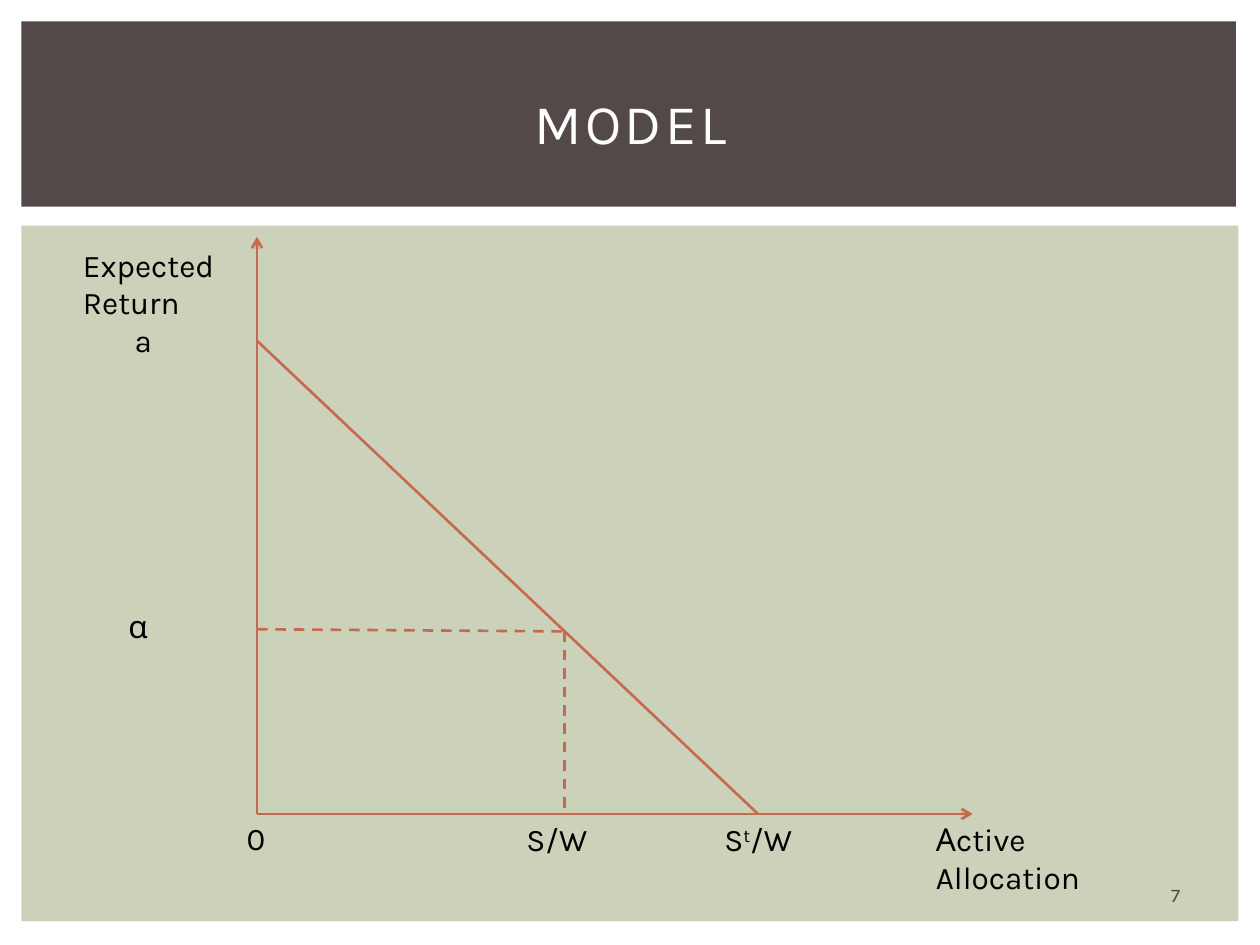
from collections import namedtuple

from lxml.etree import SubElement
from pptx import Presentation
from pptx.dml.color import RGBColor
from pptx.enum.dml import MSO_LINE
from pptx.enum.shapes import MSO_CONNECTOR, MSO_SHAPE
from pptx.enum.text import MSO_ANCHOR, PP_ALIGN
from pptx.oxml.ns import qn
from pptx.util import Inches, Pt

# The slide is a grid of 100 columns by 75 rows
UNIT = Inches(0.1)
Box = namedtuple("Box", "left top width height")
FONT = "Karla"
BLACK, WHITE, BROWN, SAGE, RUST = "000000", "FFFFFF", "534949", "CCD1B9", "C66951"


def color(hex_string):
    return RGBColor.from_string(hex_string)


def grid(*cells):
    return [round(cell * UNIT) for cell in cells]


def inside(box, left, top, width, height):
    return Box(box.left + left, box.top + top, width, height)


def add_panel(page, box, fill):
    panel = page.shapes.add_shape(MSO_SHAPE.RECTANGLE, *grid(*box))
    panel.shadow.inherit = False
    panel.fill.solid()
    panel.fill.fore_color.rgb = color(fill)
    panel.line.fill.background()


def add_text(page, box, text, size=18, ink=BLACK, align=PP_ALIGN.LEFT, anchor=MSO_ANCHOR.TOP):
    """Write text; the part between carets is superscript."""
    frame = page.shapes.add_textbox(*grid(*box)).text_frame
    frame.word_wrap = True
    frame.vertical_anchor = anchor
    para = frame.paragraphs[0]
    para.alignment = align
    para.font.name, para.font.size = FONT, Pt(size)
    para.font.color.rgb = color(ink)
    for index, part in enumerate(text.split("^")):
        span = para.add_run()
        span.text = part
        if index % 2:
            span._r.get_or_add_rPr().set("baseline", "30000")
    return para


def add_line(page, start, end, dashed=False, arrow=False):
    line = page.shapes.add_connector(MSO_CONNECTOR.STRAIGHT, *grid(*start, *end))
    line.line.color.rgb = color(RUST)
    line.line.width = Pt(1.5)
    if dashed:
        line.line.dash_style = MSO_LINE.DASH
    if arrow:
        SubElement(line.line._get_or_add_ln(), qn("a:tailEnd"), type="arrow")
    SubElement(line._element.spPr, qn("a:effectLst"))


def add_header(page, box, title):
    add_panel(page, box, BROWN)
    para = add_text(page, inside(box, 2.5, 2.2, 91.7, 11.5), title, 32, WHITE,
                    PP_ALIGN.CENTER, MSO_ANCHOR.MIDDLE)
    para.runs[0]._r.get_or_add_rPr().set("spc", "200")


def add_diagram(page, box):
    add_panel(page, box, SAGE)
    origin_x, origin_y = box.left + 18.7, box.top + 46.7
    axis_width, axis_height = 56.8, 45.8

    def point(x, y):
        return origin_x + x * axis_width, origin_y - y * axis_height

    # Axes
    for end in (point(1, 0), point(0, 1)):
        add_line(page, point(0, 0), end, arrow=True)

    # Falling return line, with dashes to the chosen allocation
    top_return, full_share, chosen_share, alpha = 0.82, 0.7, 0.43, 0.32
    crossing = point(chosen_share, top_return * (1 - chosen_share / full_share))
    add_line(page, point(0, top_return), point(full_share, 0))
    add_line(page, point(0, alpha), crossing, dashed=True)
    add_line(page, crossing, point(chosen_share, 0), dashed=True)

    # Labels: text, left, top, width, height
    labels = [
        ("α", 7.5, 29.8, 5.1, 4),
        ("a", 8, 7.1, 11.1, 4),
        ("0", 16.9, 46.6, 11.1, 4),
        ("S/W", 39.1, 46.7, 11.1, 4),
        ("S^t^/W", 54.8, 46.7, 11.1, 4),
        ("Αctive Allocation", 71.6, 46.7, 13.6, 7.1),
        ("Expected Return", 3.9, 1.1, 12.6, 7.1),
    ]
    for text, *place in labels:
        add_text(page, inside(box, *place), text)


def add_page_number(page, box, number):
    add_text(page, box, number, 11, BROWN, PP_ALIGN.CENTER, MSO_ANCHOR.MIDDLE)


def main():
    deck = Presentation()
    deck.slide_width, deck.slide_height = grid(100, 75)
    page = deck.slides.add_slide(deck.slide_layouts[6])
    add_diagram(page, Box(1.7, 17.9, 96.6, 55.2))
    add_header(page, Box(1.7, 1.7, 96.4, 14.7), "MODEL")
    add_page_number(page, Box(90.1, 69.5, 6.4, 3), "7")
    deck.save("out.pptx")


if __name__ == "__main__":
    main()
